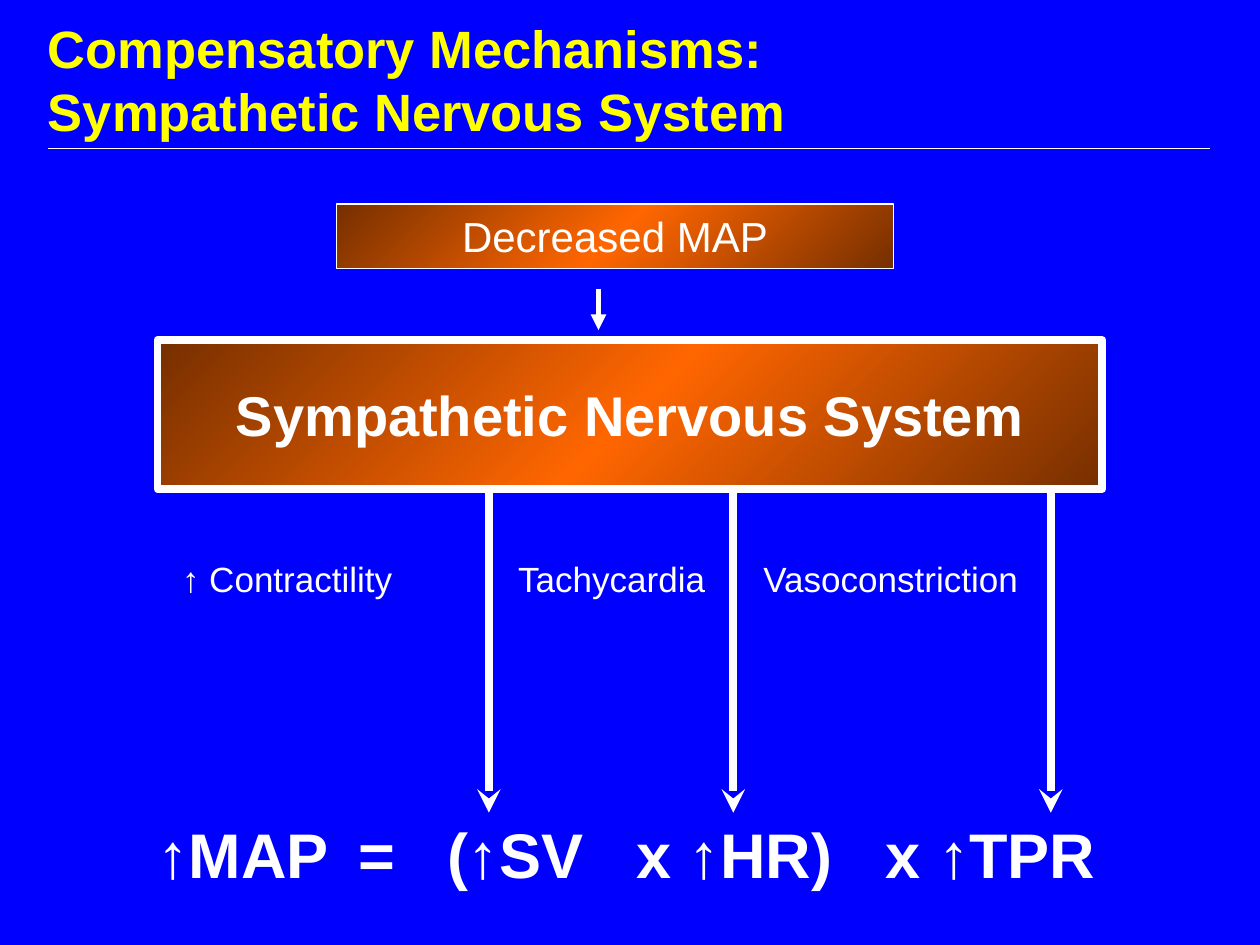
from copy import deepcopy

from pptx import Presentation
from pptx.dml.color import RGBColor
from pptx.enum.shapes import MSO_CONNECTOR, MSO_SHAPE
from pptx.enum.text import MSO_ANCHOR, PP_ALIGN
from pptx.oxml.ns import qn
from pptx.oxml.xmlchemy import OxmlElement
from pptx.util import Inches, Pt

LEFT, CENTER = PP_ALIGN.LEFT, PP_ALIGN.CENTER
TOP, MIDDLE, BOTTOM = MSO_ANCHOR.TOP, MSO_ANCHOR.MIDDLE, MSO_ANCHOR.BOTTOM
RECTANGLE, STRAIGHT = MSO_SHAPE.RECTANGLE, MSO_CONNECTOR.STRAIGHT

# Content
TITLE = "Compensatory Mechanisms:\vSympathetic Nervous System"
TRIGGER = "Decreased MAP"
SYSTEM = "Sympathetic Nervous System"
EFFECTS = [  # text, left, width, x of the arrow to its factor
    ("↑ Contractility", 1.33, 1.9, 3.88),
    ("Tachycardia", 3.95, 1.81, 5.82),
    ("Vasoconstriction", 5.95, 2.24, 8.34),
]
FORMULA = [  # term, offset from the start of the line
    ("↑MAP", 0), ("=", 1.6), ("(↑SV", 2.3), ("x ↑HR)", 3.8), ("x ↑TPR", 5.78),
]

THEME = {
    "font": "Arial",
    "background": RGBColor(0x00, 0x00, 0xFF),
    "title": RGBColor(0xFF, 0xFF, 0x00),
    "text": RGBColor(0xFF, 0xFF, 0xFF),
    "gradient": [(0, RGBColor(0x76, 0x2F, 0x00)),
                 (0.5, RGBColor(0xFF, 0x66, 0x00)),
                 (1, RGBColor(0x76, 0x2F, 0x00))],
    "sizes": {"title": 30, "trigger": 24, "system": 32, "effect": 20, "formula": 36},
    "lines": {"thin": 0.75, "medium": 3, "thick": 4.5},
}

# Layout, in inches
RULE_Y = 1.18
TRIGGER_BOX = (2.67, 1.62, 4.42, 0.51)
SYSTEM_BOX = (1.25, 2.7, 7.5, 1.18)
SYSTEM_BOTTOM = SYSTEM_BOX[1] + SYSTEM_BOX[3]
EFFECT_Y, EFFECT_HEIGHT = 4.38, 0.43
ARROW_END = 6.45
FORMULA_BOX = (1.15, 6.42, 7.77, 0.7)


def inches(box):
    return [Inches(value) for value in box]


def write(shape, text, role, align=CENTER, anchor=MIDDLE, bold=False, tabs=()):
    frame = shape.text_frame
    frame.word_wrap = True
    frame.vertical_anchor = anchor
    frame.text = text
    paragraph = frame.paragraphs[0]
    paragraph.alignment = align
    if tabs:
        tab_list = OxmlElement("a:tabLst")
        for offset in tabs:
            tab = OxmlElement("a:tab")
            tab.set("pos", str(Inches(offset)))
            tab.set("algn", "l")
            tab_list.append(tab)
        paragraph._p.get_or_add_pPr().append(tab_list)
    look = {"name": THEME["font"], "size": Pt(THEME["sizes"][role]), "bold": bold}
    for run in paragraph.runs:
        for attribute, value in look.items():
            setattr(run.font, attribute, value)
        run.font.color.rgb = THEME["title" if role == "title" else "text"]


def outline(shape, weight):
    shape.line.color.rgb = THEME["text"]
    shape.line.width = Pt(THEME["lines"][weight])


def add_gradient_box(slide, box, weight):
    shape = slide.shapes.add_shape(RECTANGLE, *inches(box))
    shape.shadow.inherit = False
    shape.fill.gradient()
    shape.fill.gradient_angle = 315
    stop_list = shape._element.spPr.find(".//" + qn("a:gsLst"))
    stop_list.append(deepcopy(stop_list[0]))
    for stop, (position, color) in zip(shape.fill.gradient_stops, THEME["gradient"]):
        stop.position = position
        stop.color.rgb = color
    outline(shape, weight)
    return shape


def add_line(slide, start, end, weight, head=None):
    line = slide.shapes.add_connector(STRAIGHT, *inches(start + end))
    outline(line, weight)
    if head:
        tail = OxmlElement("a:tailEnd")
        tail.set("type", head)
        line.line._get_or_add_ln().append(tail)
    line._element.spPr.append(OxmlElement("a:effectLst"))


def main():
    presentation = Presentation()
    presentation.slide_width, presentation.slide_height = Inches(10), Inches(7.5)
    slide = presentation.slides.add_slide(presentation.slide_layouts[5])
    slide.background.fill.solid()
    slide.background.fill.fore_color.rgb = THEME["background"]

    # Title and rule
    title = slide.shapes.title
    title.left, title.top, title.width, title.height = inches((0.28, 0, 9.32, RULE_Y))
    write(title, TITLE, "title", LEFT, BOTTOM, bold=True)
    add_line(slide, (0.38, RULE_Y), (9.6, RULE_Y), "thin")

    # Trigger and the system it activates
    trigger = add_gradient_box(slide, TRIGGER_BOX, "thin")
    write(trigger, TRIGGER, "trigger", anchor=TOP)
    add_line(slide, (4.75, 2.29), (4.75, 2.62), "medium", "triangle")
    system = add_gradient_box(slide, SYSTEM_BOX, "thick")
    write(system, SYSTEM, "system", bold=True)

    # Effects, each with an arrow to its factor
    for text, left, width, arrow_x in EFFECTS:
        add_line(slide, (arrow_x, SYSTEM_BOTTOM), (arrow_x, ARROW_END), "thick", "stealth")
        effect = slide.shapes.add_textbox(*inches((left, EFFECT_Y, width, EFFECT_HEIGHT)))
        write(effect, text, "effect")

    # Formula, its terms set on tab stops
    terms, offsets = zip(*FORMULA)
    formula = slide.shapes.add_textbox(*inches(FORMULA_BOX))
    write(formula, "\t".join(terms), "formula", LEFT, bold=True, tabs=offsets[1:])

    presentation.save("out.pptx")


if __name__ == "__main__":
    main()
